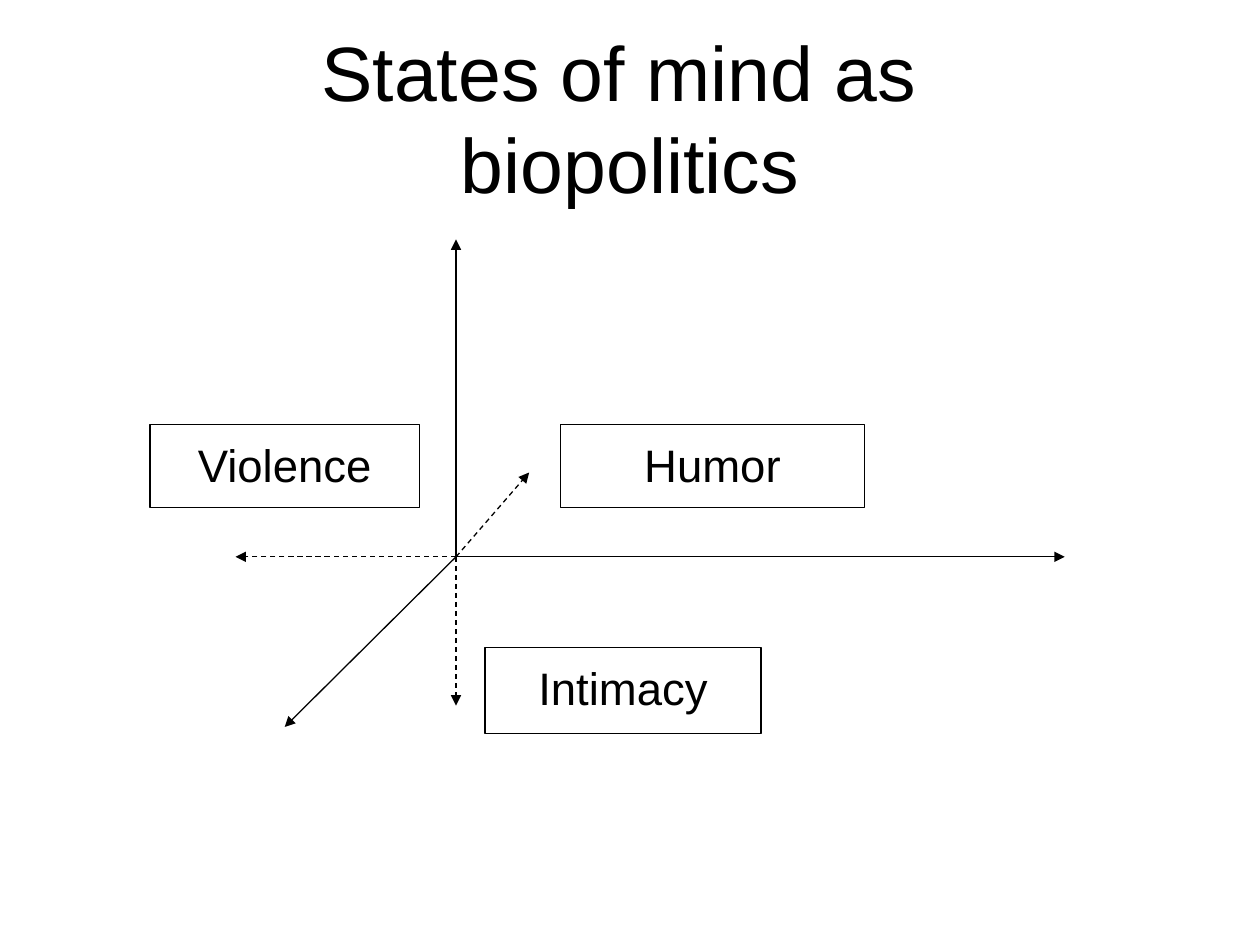
from dataclasses import dataclass

from lxml.etree import SubElement
from pptx import Presentation
from pptx.dml.color import RGBColor
from pptx.enum.dml import MSO_LINE
from pptx.enum.shapes import MSO_CONNECTOR, MSO_SHAPE
from pptx.enum.text import MSO_ANCHOR, PP_ALIGN
from pptx.oxml.ns import qn
from pptx.util import Pt


@dataclass(frozen=True)
class Theme:
    font: str = "Arial"
    ink: RGBColor = RGBColor(0, 0, 0)
    paper: RGBColor = RGBColor(255, 255, 255)
    title_size: float = 44
    label_size: float = 26
    line_width: float = 0.75


class SlideBuilder:
    def __init__(self, slide, theme):
        self.slide = slide
        self.theme = theme

    def set_text(self, frame, text, size, anchor):
        frame.word_wrap = True
        frame.vertical_anchor = anchor
        frame.text = text
        paragraph = frame.paragraphs[0]
        paragraph.alignment = PP_ALIGN.CENTER
        paragraph.font.name = self.theme.font
        paragraph.font.size = Pt(size)
        paragraph.font.color.rgb = self.theme.ink

    def outline(self, line):
        line.color.rgb = self.theme.ink
        line.width = Pt(self.theme.line_width)

    def title(self, text, left, top, width, height):
        heading = self.slide.shapes.add_textbox(Pt(left), Pt(top), Pt(width), Pt(height))
        self.set_text(heading.text_frame, text, self.theme.title_size, MSO_ANCHOR.MIDDLE)

    def arrow(self, start, end, dashed=False):
        axis = self.slide.shapes.add_connector(
            MSO_CONNECTOR.STRAIGHT, *(Pt(value) for value in (*start, *end)))
        self.outline(axis.line)
        if dashed:
            axis.line.dash_style = MSO_LINE.DASH
        properties = axis.element.spPr
        SubElement(properties.find(qn("a:ln")), qn("a:tailEnd"), type="triangle")
        SubElement(properties, qn("a:effectLst"))

    def label(self, text, left, top, width, height, filled=False):
        box = self.slide.shapes.add_shape(
            MSO_SHAPE.RECTANGLE, Pt(left), Pt(top), Pt(width), Pt(height))
        box.shadow.inherit = False
        if filled:
            box.fill.solid()
            box.fill.fore_color.rgb = self.theme.paper
        else:
            box.fill.background()
        self.outline(box.line)
        box.text_frame.margin_top = Pt(7)
        self.set_text(box.text_frame, text, self.theme.label_size, MSO_ANCHOR.TOP)


def main():
    presentation = Presentation()
    presentation.slide_width, presentation.slide_height = Pt(720), Pt(540)
    builder = SlideBuilder(
        presentation.slides.add_slide(presentation.slide_layouts[6]), Theme())

    builder.title("States of mind as \vbiopolitics", 36, 21.6, 648, 90)

    origin_x, origin_y = origin = (260.6, 318.2)
    positive_ends = [(origin_x, 136.8), (162.7, 415.4), (608.4, origin_y)]
    negative_ends = [(origin_x, 403.2), (134.6, origin_y), (302.4, 270)]
    for end in positive_ends:
        builder.arrow(origin, end)
    for end in negative_ends:
        builder.arrow(origin, end, dashed=True)

    upper_row = 242.6
    builder.label("Violence", 85.7, upper_row, 154.1, 47.5)
    builder.label("Humor", 320.4, upper_row, 173.5, 47.5, filled=True)
    builder.label("Intimacy", 277.2, 370.1, 157.7, 49)

    presentation.save("out.pptx")


if __name__ == "__main__":
    main()
